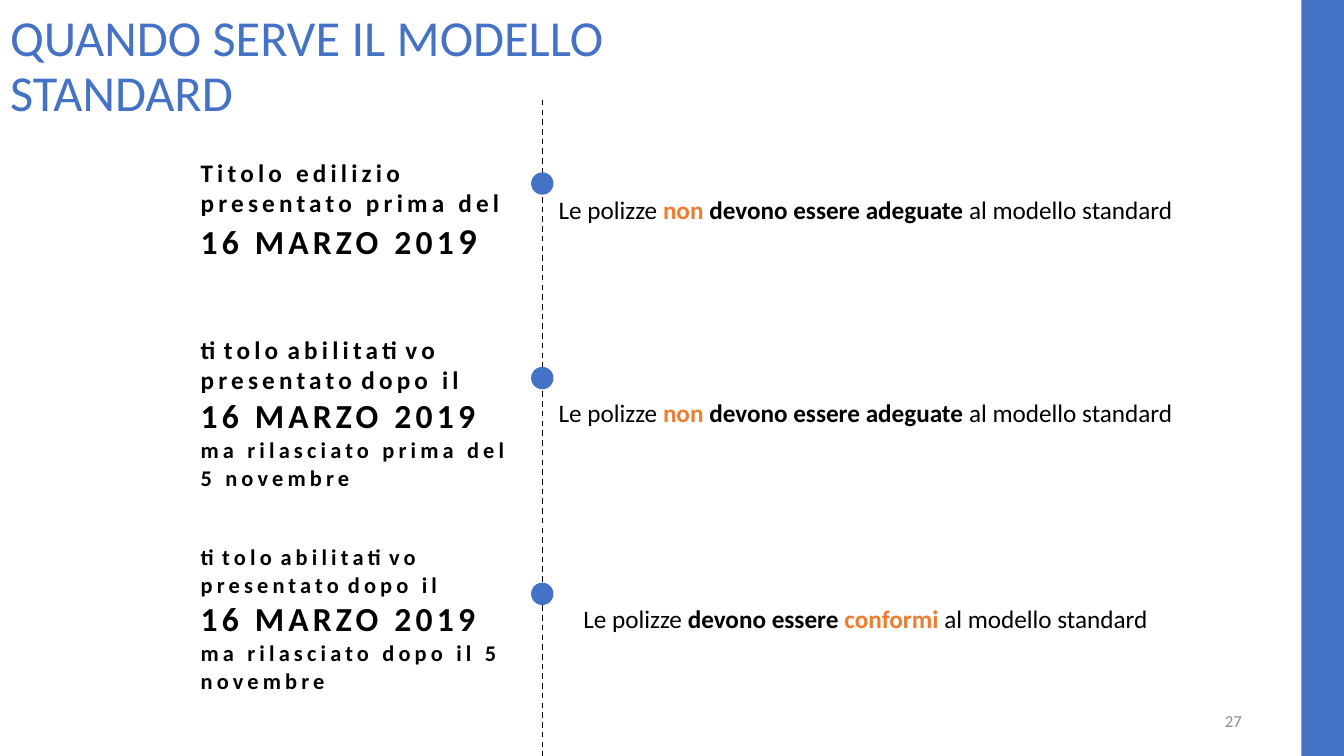
from dataclasses import dataclass

from lxml import etree
from pptx import Presentation
from pptx.dml.color import RGBColor
from pptx.enum.dml import MSO_LINE
from pptx.enum.shapes import MSO_CONNECTOR, MSO_SHAPE
from pptx.enum.text import MSO_ANCHOR, MSO_AUTO_SIZE, PP_ALIGN
from pptx.oxml.ns import qn
from pptx.slide import Slide
from pptx.table import _Cell as Cell
from pptx.util import Pt

BLUE = RGBColor(0x44, 0x72, 0xC4)
ORANGE = RGBColor(0xED, 0x7D, 0x31)
BLACK = RGBColor(0, 0, 0)
GREY = RGBColor(0x8C, 0x8C, 0x8C)
FONT = "Calibri"
PLAIN_TABLE_STYLE = "{2D5ABB26-0587-4C30-8999-92F81FD0307C}"

TIMELINE_X = 387.4
DOT_SIZE = 16


@dataclass(frozen=True)
class Run:
    text: str
    size: float = 18
    bold: bool = False
    color: RGBColor = BLACK
    tracking: float = 0


@dataclass(frozen=True)
class Case:
    condition: list[list[Run]]
    outcome: list[Run]
    row_height: float
    dot_top: float


def spaced(text: str, size: float = 18) -> Run:
    return Run(text, size, bold=True, tracking=3)


def permit_filed_after(size: float) -> list[Run]:
    """Opening line shared by the two cases filed after the deadline."""
    gap = 16 if size == 18 else 14
    return [
        spaced("titolo", size), Run(" ", gap),
        spaced("abilitativo", size), Run(" ", gap),
        spaced("presentato", size), Run(" ", gap),
        spaced("dopo il", size),
    ]


NOT_REQUIRED = [
    Run("Le polizze "),
    Run("non", bold=True, color=ORANGE),
    Run(" devono essere adeguate ", bold=True),
    Run("al modello standard"),
]
REQUIRED = [
    Run("Le polizze "),
    Run("devono essere ", bold=True),
    Run("conformi ", bold=True, color=ORANGE),
    Run("al modello standard"),
]

CASES = [
    Case(
        [[spaced("Titolo edilizio presentato prima del")],
         [spaced("16 MARZO 201", 24), spaced("9", 26)]],
        NOT_REQUIRED, 144.7, 123.1,
    ),
    Case(
        [permit_filed_after(18),
         [spaced("16 MARZO 2019 ", 24),
          spaced("ma rilasciato prima del 5 novembre", 16)]],
        NOT_REQUIRED, 144.7, 262.1,
    ),
    Case(
        [permit_filed_after(16),
         [spaced("16 MARZO 2019", 24)],
         [spaced("ma rilasciato dopo il 5 novembre", 16)]],
        REQUIRED, 149.8, 416.2,
    ),
]


def write(frame, paragraphs: list[list[Run]], align: PP_ALIGN = PP_ALIGN.LEFT) -> None:
    for index, runs in enumerate(paragraphs):
        paragraph = frame.paragraphs[0] if index == 0 else frame.add_paragraph()
        paragraph.alignment = align
        for item in runs:
            run = paragraph.add_run()
            run.text = item.text
            font = run.font
            font.name, font.size, font.bold = FONT, Pt(item.size), item.bold
            font.color.rgb = item.color
            if item.tracking:
                font._element.set("spc", str(int(item.tracking * 100)))


def fill_cell(cell: Cell, paragraphs: list[list[Run]], align: PP_ALIGN) -> None:
    cell.fill.background()
    cell.vertical_anchor = MSO_ANCHOR.MIDDLE
    write(cell.text_frame, paragraphs, align)


def add_blue_shape(slide: Slide, kind: MSO_SHAPE, left: float, top: float,
                   width: float, height: float) -> None:
    shape = slide.shapes.add_shape(kind, Pt(left), Pt(top), Pt(width), Pt(height))
    shape.shadow.inherit = False
    shape.fill.solid()
    shape.fill.fore_color.rgb = BLUE
    shape.line.fill.background()


def add_title(slide: Slide) -> None:
    title = slide.shapes.title
    title.left, title.top, title.width, title.height = Pt(0), Pt(0), Pt(604), Pt(96.5)
    frame = title.text_frame
    frame.word_wrap = True
    frame.auto_size = MSO_AUTO_SIZE.NONE
    frame.vertical_anchor = MSO_ANCHOR.MIDDLE
    write(frame, [[Run("QUANDO SERVE IL MODELLO STANDARD", 36, color=BLUE)]])
    frame.paragraphs[0].line_spacing = 0.9


def add_case_table(slide: Slide) -> None:
    graphic = slide.shapes.add_table(
        len(CASES), 2, Pt(136.1), Pt(78.5), Pt(728),
        Pt(sum(case.row_height for case in CASES)))
    table = graphic.table
    table.first_row = table.horz_banding = False
    table._tbl.tblPr.find(qn("a:tableStyleId")).text = PLAIN_TABLE_STYLE
    for column, width in zip(table.columns, (236.2, 491.8)):
        column.width = Pt(width)
    for row, case in zip(table.rows, CASES):
        row.height = Pt(case.row_height)
        fill_cell(row.cells[0], case.condition, PP_ALIGN.LEFT)
        fill_cell(row.cells[1], [case.outcome], PP_ALIGN.CENTER)


def add_timeline(slide: Slide) -> None:
    axis = slide.shapes.add_connector(
        MSO_CONNECTOR.STRAIGHT, Pt(TIMELINE_X), Pt(71.3), Pt(TIMELINE_X), Pt(547.2))
    axis.line.color.rgb = BLACK
    axis.line.width = Pt(1)
    axis.line.dash_style = MSO_LINE.DASH
    etree.SubElement(axis._element.spPr, qn("a:effectLst"))
    for case in CASES:
        add_blue_shape(slide, MSO_SHAPE.OVAL, TIMELINE_X - DOT_SIZE / 2,
                       case.dot_top, DOT_SIZE, DOT_SIZE)


def add_page_number(slide: Slide) -> None:
    box = slide.shapes.add_textbox(Pt(678.2), Pt(500.4), Pt(216), Pt(28.8))
    frame = box.text_frame
    frame.word_wrap = True
    frame.vertical_anchor = MSO_ANCHOR.MIDDLE
    write(frame, [[Run("27", 12, color=GREY)]], PP_ALIGN.RIGHT)


def main() -> None:
    deck = Presentation()
    deck.slide_width, deck.slide_height = Pt(960), Pt(540)
    slide = deck.slides.add_slide(deck.slide_layouts.get_by_name("Title Only"))

    # Side band
    add_blue_shape(slide, MSO_SHAPE.RECTANGLE, 929.6, 0, 30.4, 540)
    # Cases and their outcomes
    add_case_table(slide)
    add_page_number(slide)
    # Dashed axis with one dot per case
    add_timeline(slide)
    add_title(slide)

    deck.save("out.pptx")


if __name__ == "__main__":
    main()
